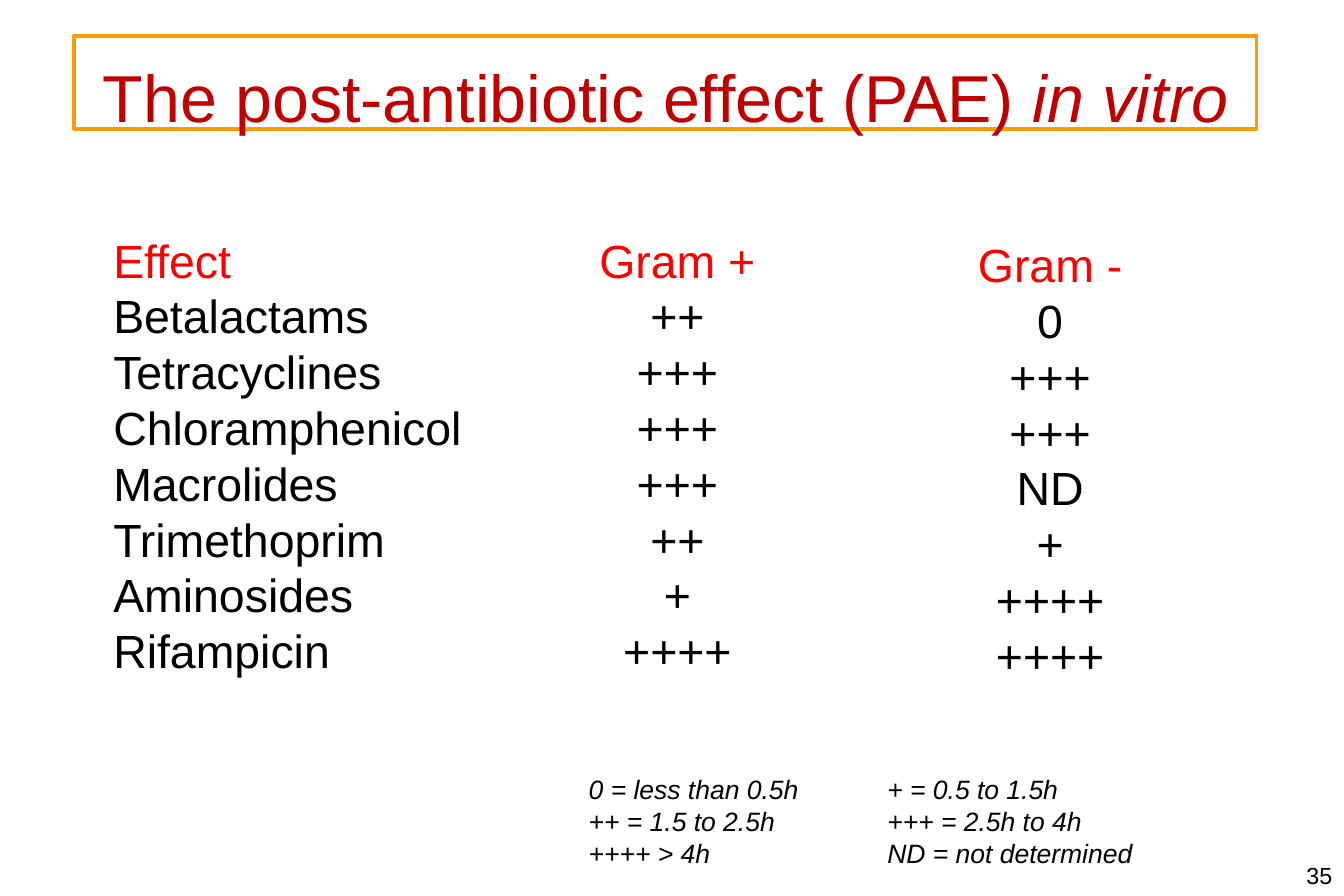
from lxml import etree
from pptx import Presentation
from pptx.dml.color import RGBColor
from pptx.enum.shapes import MSO_SHAPE
from pptx.enum.text import MSO_ANCHOR, PP_ALIGN
from pptx.oxml.ns import qn
from pptx.util import Inches, Pt

RECT = MSO_SHAPE.RECTANGLE
TOP, MIDDLE = MSO_ANCHOR.TOP, MSO_ANCHOR.MIDDLE
LEFT, CENTER, RIGHT = PP_ALIGN.LEFT, PP_ALIGN.CENTER, PP_ALIGN.RIGHT

FONT = "Arial"
BLACK, WHITE, RED = "000000", "FFFFFF", "FF0000"
DARK_RED, ORANGE = "C00000", "FE9B03"

EFFECTS = [
    ("Effect", "Gram +", "Gram -"),
    ("Betalactams", "++", "0"),
    ("Tetracyclines", "+++", "+++"),
    ("Chloramphenicol", "+++", "+++"),
    ("Macrolides", "+++", "ND"),
    ("Trimethoprim", "++", "+"),
    ("Aminosides", "+", "++++"),
    ("Rifampicin", "++++", "++++"),
]
COLUMNS = [
    (0.85, 1.89, 3.16, LEFT),
    (4.91, 1.89, 1.52, CENTER),
    (8.08, 1.93, 1.42, CENTER),
]
COLUMN_HEIGHT = 3.87
LEGEND = [
    "0 = less than 0.5h\t+ = 0.5 to 1.5h",
    "++ = 1.5 to 2.5h\t+++ = 2.5h to 4h",
    "++++ > 4h\tND = not determined",
]
LEGEND_TAB = 2.5


def rgb(color):
    return RGBColor.from_string(color)


def add_run(p, text, size=28, color=BLACK, italic=False):
    r = p.add_run()
    r.text = text
    r.font.name = FONT
    r.font.size = Pt(size)
    r.font.color.rgb = rgb(color)
    r.font.italic = italic


def add_paragraph(tf, first=False, align=LEFT):
    p = tf.paragraphs[0] if first else tf.add_paragraph()
    p.alignment = align
    return p


def add_text_box(s, x, y, w, h, wrap=False, anchor=TOP):
    tf = s.shapes.add_textbox(Inches(x), Inches(y), Inches(w), Inches(h)).text_frame
    tf.word_wrap = wrap
    tf.vertical_anchor = anchor
    return tf


def add_frame(s, x, y, w, h, line):
    sp = s.shapes.add_shape(RECT, Inches(x), Inches(y), Inches(w), Inches(h))
    sp.shadow.inherit = False
    sp.fill.background()
    sp.line.color.rgb = rgb(line)
    sp.line.width = Pt(2)
    tf = sp.text_frame
    tf.word_wrap = True
    tf.vertical_anchor = TOP
    return tf


def add_tab_stop(p, position):
    tabs = etree.SubElement(p._p.get_or_add_pPr(), qn("a:tabLst"))
    etree.SubElement(tabs, qn("a:tab"), pos=str(Inches(position)), algn="l")


def add_column(s, entries, x, y, w, align):
    tf = add_text_box(s, x, y, w, COLUMN_HEIGHT)
    for i, entry in enumerate(entries):
        p = add_paragraph(tf, first=i == 0, align=align)
        add_run(p, entry, color=RED if i == 0 else BLACK)


def add_legend(s):
    tf = add_frame(s, 4.83, 6.42, 5.76, 0.91, WHITE)
    for i, line in enumerate(LEGEND):
        p = add_paragraph(tf, first=i == 0)
        add_tab_stop(p, LEGEND_TAB)
        add_run(p, line, size=16, italic=True)


def add_title(s):
    tf = add_frame(s, 0.62, 0.3, 9.9, 0.78, ORANGE)
    tf.margin_top = Inches(0.1)
    p = add_paragraph(tf, first=True, align=CENTER)
    p.line_spacing = 1.1
    add_run(p, "The post-antibiotic effect (PAE) ", size=40, color=DARK_RED)
    add_run(p, "in vitro", size=40, color=DARK_RED, italic=True)


def add_page_number(s):
    tf = add_text_box(s, 8.34, 7.15, 2.91, 0.35, wrap=True, anchor=MIDDLE)
    add_run(add_paragraph(tf, first=True, align=RIGHT), "35", size=14)


def main():
    prs = Presentation()
    prs.slide_width = Inches(11.25)
    prs.slide_height = Inches(7.5)
    s = prs.slides.add_slide(prs.slide_layouts[6])
    for entries, (x, y, w, align) in zip(zip(*EFFECTS), COLUMNS):
        add_column(s, entries, x, y, w, align)
    add_legend(s)
    add_title(s)
    add_page_number(s)
    prs.save("out.pptx")


if __name__ == "__main__":
    main()
